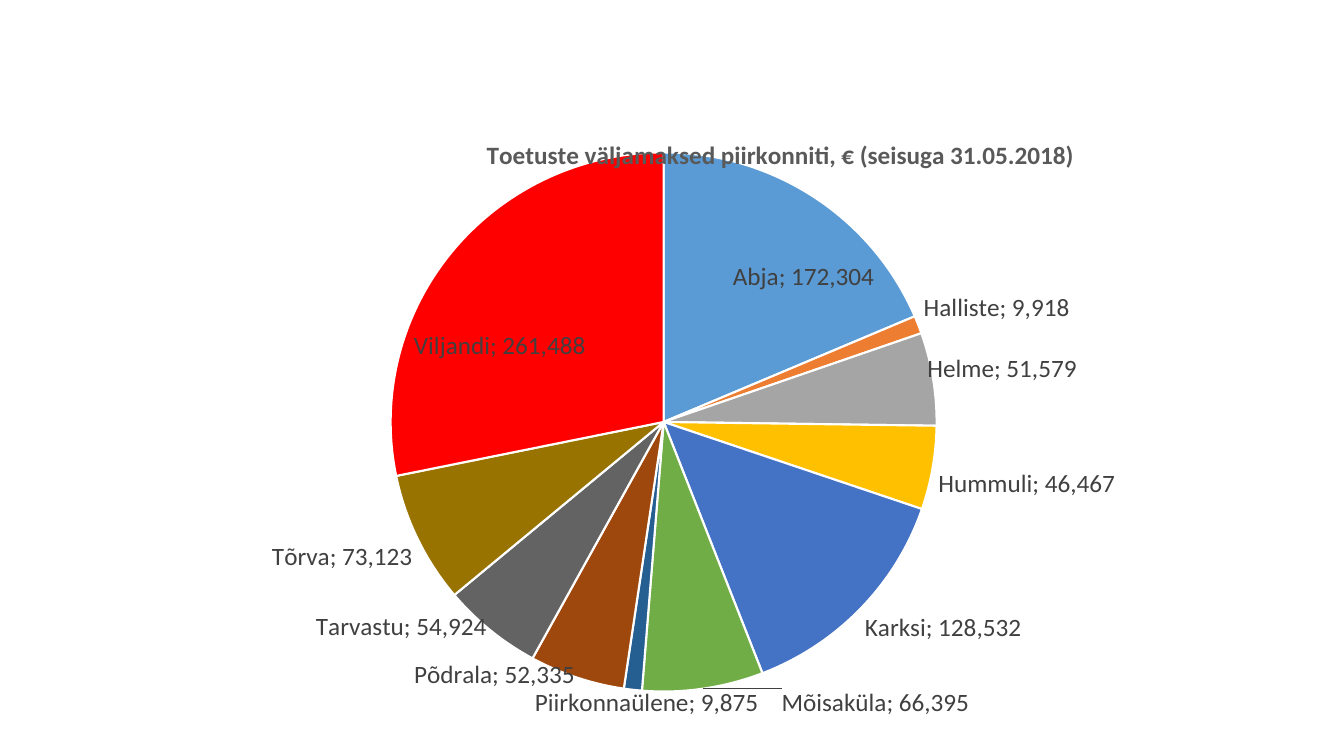
from pptx import Presentation
from pptx.chart.data import CategoryChartData
from pptx.dml.color import RGBColor
from pptx.enum import chart as ec
from pptx.oxml import parse_xml
from pptx.oxml.ns import nsdecls, qn
from pptx.util import Pt

TITLE = RGBColor(0x59, 0x59, 0x59)
LABEL = RGBColor(0x40, 0x40, 0x40)
WHITE = RGBColor(0xFF, 0xFF, 0xFF)
BLACK = RGBColor(0, 0, 0)
FORMAT = "#,##0"

REGIONS = [
    ("Abja", 172304, RGBColor(0x5B, 0x9B, 0xD5)),
    ("Halliste", 9918, RGBColor(0xED, 0x7D, 0x31)),
    ("Helme", 51579, RGBColor(0xA5, 0xA5, 0xA5)),
    ("Hummuli", 46467, RGBColor(0xFF, 0xC0, 0x00)),
    ("Karksi", 128532, RGBColor(0x44, 0x72, 0xC4)),
    ("Mõisaküla", 66395, RGBColor(0x70, 0xAD, 0x47)),
    ("Piirkonnaülene", 9875, RGBColor(0x25, 0x5E, 0x91)),
    ("Põdrala", 52335, RGBColor(0x9E, 0x48, 0x0E)),
    ("Tarvastu", 54924, RGBColor(0x63, 0x63, 0x63)),
    ("Tõrva", 73123, RGBColor(0x99, 0x73, 0x00)),
    ("Viljandi", 261488, RGBColor(0xFF, 0x00, 0x00)),
]
# Label shifts as shares of the chart's width and height
SHIFTS = {
    "Helme": (-0.01, 0.01),
    "Piirkonnaülene": (0.11, 0),
    "Põdrala": (0, -0.04),
    "Tarvastu": (0, -0.04),
}


def style(font, size, color, bold=False):
    font.name, font.size, font.bold = "Calibri", Pt(size), bold
    font.color.rgb = color


def layout(**parts):
    """Make a manual layout from its child tags, given in schema order."""
    tags = "".join(f'<c:{tag} val="{val}"/>' for tag, val in parts.items())
    return parse_xml(f'<c:layout {nsdecls("c")}><c:manualLayout>{tags}'
                     '</c:manualLayout></c:layout>')


def drop_layout(node):
    for old in node.findall(qn("c:layout")):
        node.remove(old)


def separate(node):
    """Put the separator between category and value."""
    mark = parse_xml(f'<c:separator {nsdecls("c")}>; </c:separator>')
    node.find(qn("c:showBubbleSize")).addnext(mark)


def add_title(chart, words):
    frame = chart.chart_title.text_frame
    frame.text = words
    style(frame.paragraphs[0].font, 18, TITLE, True)
    node = chart.element.find(".//" + qn("c:title"))
    drop_layout(node)
    node.find(qn("c:tx")).addnext(
        layout(xMode="edge", yMode="edge", x=0.33, y=0.01))
    node.find(qn("c:overlay")).set("val", "1")


def place_plot(chart):
    area = chart.element.find(".//" + qn("c:plotArea"))
    drop_layout(area)
    area.insert(0, layout(layoutTarget="inner", xMode="edge", yMode="edge",
                          x=0.021, y=0.043, w=0.934, h=0.912))


def add_labels(plot):
    plot.has_data_labels = True
    labels = plot.series[0].data_labels
    labels.show_value = labels.show_category_name = True
    labels.number_format = FORMAT
    labels.number_format_is_linked = False
    labels.position = ec.XL_LABEL_POSITION.BEST_FIT
    style(labels.font, 18, LABEL)


def shift_label(point, x, y):
    label = point.data_label
    style(label.font, 18, LABEL)
    label.position = ec.XL_LABEL_POSITION.BEST_FIT


def finish_labels(series):
    """Shift single labels and set separators and leader lines."""
    names = [name for name, _, _ in REGIONS]
    for name, (x, y) in SHIFTS.items():
        shift_label(series.points[names.index(name)], x, y)
    group = series.data_labels._element
    for node in group.findall(qn("c:dLbl")):
        index = node.find(qn("c:idx"))
        x, y = SHIFTS[names[int(index.get("val"))]]
        drop_layout(node)
        index.addnext(layout(x=x, y=y))
        node.find(qn("c:showCatName")).set("val", "1")
        separate(node)
    if group.find(qn("c:showBubbleSize")) is not None:
        separate(group)
    lead = group.find(qn("c:showLeaderLines"))
    if lead is not None:
        lead.set("val", "1")
    else:
        group.append(parse_xml(
            f'<c:showLeaderLines {nsdecls("c")} val="1"/>'))


def add_pie(slide):
    data = CategoryChartData(number_format=FORMAT)
    data.categories = [name for name, _, _ in REGIONS]
    data.add_series("Series 1", [sum for _, sum, _ in REGIONS])
    chart = slide.shapes.add_chart(
        ec.XL_CHART_TYPE.PIE, Pt(73.5), Pt(90.75), Pt(820.8), Pt(427.7),
        data).chart
    style(chart.font, 10, BLACK)
    chart.has_legend = False
    add_title(chart, "Toetuste väljamaksed piirkonniti, € (seisuga 31.05.2018)")
    place_plot(chart)
    plot = chart.plots[0]
    plot.vary_by_categories = True
    series = plot.series[0]
    for i, (_, _, color) in enumerate(REGIONS):
        slice = series.points[i].format
        slice.fill.solid()
        slice.fill.fore_color.rgb = color
        slice.line.color.rgb = WHITE
        slice.line.width = Pt(1.5)
    add_labels(plot)
    finish_labels(series)


def main():
    deck = Presentation()
    deck.slide_width, deck.slide_height = Pt(960), Pt(540)
    add_pie(deck.slides.add_slide(deck.slide_layouts[6]))
    deck.save("out.pptx")


if __name__ == "__main__":
    main()
